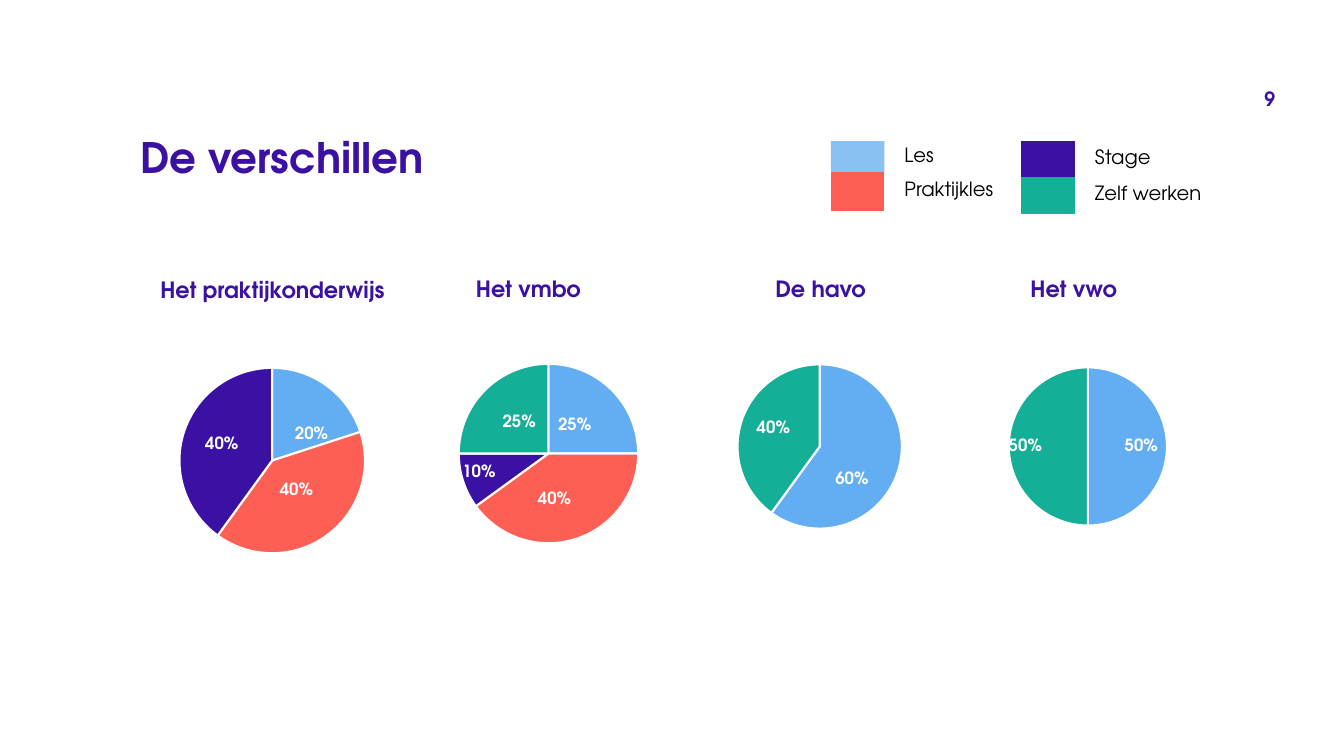
from math import cos, pi, sin

from pptx import Presentation
from pptx.chart.data import CategoryChartData
from pptx.dml.color import RGBColor
from pptx.enum.chart import XL_CHART_TYPE, XL_LABEL_POSITION
from pptx.enum.text import MSO_ANCHOR, MSO_AUTO_SIZE, PP_ALIGN
from pptx.oxml import parse_xml
from pptx.oxml.ns import nsdecls
from pptx.util import Inches, Pt

FONT = "TeX Gyre Adventor"
BLUE = RGBColor(0x63, 0xAD, 0xF2)
CORAL = RGBColor(0xFE, 0x5F, 0x55)
PURPLE = RGBColor(0x3B, 0x11, 0xA3)
GREEN = RGBColor(0x15, 0xAF, 0x97)
BLACK = RGBColor(0, 0, 0)
WHITE = RGBColor(255, 255, 255)
NO_GRID_STYLE = "{2D5ABB26-0587-4C30-8999-92F81FD0307C}"

SCHOOLS = [
    ("Het praktijkonderwijs", (1.59, 2.69, 2.43, 0.65),
     (1.27, 2.68, 2.64, 3.78), (2.7, 4.57), 1.84,
     [(20, BLUE, (0.39, -0.26)), (40, CORAL, (0.24, 0.3)),
      (40, PURPLE, (-0.5, -0.16)), (0, GREEN, None)]),
    ("Het vmbo", (4.72, 2.68, 1.3, 0.66),
     (4.04, 2.86, 2.64, 3.43), (5.44, 4.5), 1.78,
     [(25, BLUE, (0.26, -0.28)), (40, CORAL, (0.06, 0.46)),
      (10, PURPLE, (-0.69, 0.19)), (25, GREEN, (-0.29, -0.31))]),
    ("De havo", (7.69, 2.68, 1.3, 0.66),
     (6.81, 3.15, 2.64, 2.58), (8.13, 4.43), 1.63,
     [(60, BLUE, (0.32, 0.33)), (40, GREEN, (-0.46, -0.18))]),
    ("Het vwo", (10.22, 2.68, 1.34, 0.47),
     (9.47, 3.15, 2.64, 2.58), (10.79, 4.43), 1.57,
     [(50, BLUE, (0.53, 0)), (50, GREEN, (-0.62, 0))]),
]
LEGENDS = [
    ((8.24, 1.4, 2.06, 0.69), [("Les", BLUE, 0.31), ("Praktijkles", CORAL, 0.38)]),
    ((10.13, 1.4, 2.06, 0.72), [("Stage", PURPLE, 0.36), ("Zelf werken", GREEN, 0.36)]),
]


def inches(box):
    return [Inches(length) for length in box]


def style(font, size, color, bold=False):
    font.name, font.size, font.bold = FONT, Pt(size), bold
    font.color.rgb = color


def clear_margins(frame):
    frame.margin_left = frame.margin_right = 0
    frame.margin_top = frame.margin_bottom = 0


def add_title(slide, box):
    title = slide.shapes.title
    title.left, title.top, title.width, title.height = inches(box)
    frame = title.text_frame
    frame.text = "De verschillen"
    clear_margins(frame)
    frame.auto_size = MSO_AUTO_SIZE.NONE
    frame.vertical_anchor = MSO_ANCHOR.TOP
    paragraph = frame.paragraphs[0]
    paragraph.alignment = PP_ALIGN.LEFT
    paragraph.line_spacing = 0.9
    style(paragraph.font, 30, PURPLE, True)


def add_text(slide, box, text, size, spacing=None, anchor=MSO_ANCHOR.TOP):
    frame = slide.shapes.add_textbox(*inches(box)).text_frame
    frame.text = text
    frame.word_wrap = True
    frame.vertical_anchor = anchor
    clear_margins(frame)
    paragraph = frame.paragraphs[0]
    paragraph.line_spacing = spacing
    style(paragraph.font, size, PURPLE, True)


def manual_layout(x, y, size=""):
    return parse_xml(
        f'<c:layout {nsdecls("c")}><c:manualLayout>'
        + ('<c:layoutTarget val="inner"/><c:xMode val="edge"/><c:yMode val="edge"/>' if size else "")
        + f'<c:x val="{x:.4f}"/><c:y val="{y:.4f}"/>{size}</c:manualLayout></c:layout>')


def add_pie(slide, box, center, diameter, slices):
    left, top, width, height = box
    shares = [share for share, _, _ in slices]
    data = CategoryChartData()
    data.categories = [str(number) for number in range(1, len(slices) + 1)]
    data.add_series("Series 1", shares)
    chart = slide.shapes.add_chart(XL_CHART_TYPE.PIE, *inches(box), data).chart
    chart.has_title = chart.has_legend = False
    style(chart.font, 10, BLACK)
    plot = chart.plots[0]
    plot.vary_by_categories = True
    radius = diameter / 2
    plot_size = f'<c:w val="{diameter / width:.4f}"/><c:h val="{diameter / height:.4f}"/>'
    plot_area = chart.element.xpath(".//c:plotArea")[0]
    for layout in plot_area.xpath("./c:layout"):
        plot_area.remove(layout)
    plot_area.insert(0, manual_layout(
        (center[0] - radius - left) / width, (center[1] - radius - top) / height, plot_size))

    series = plot.series[0]
    labels = series.data_labels
    labels.show_percentage, labels.show_value = True, False
    labels.number_format, labels.number_format_is_linked = "0%", False
    style(labels.font, 12, WHITE, True)
    for index, (share, color, label_offset) in enumerate(slices):
        point = series.points[index]
        point.format.fill.solid()
        point.format.fill.fore_color.rgb = color
        point.format.line.color.rgb = WHITE
        point.format.line.width = Pt(1.5)
        style(point.data_label.font, 12, WHITE, True)
        point.data_label.position = XL_LABEL_POSITION.CENTER
        label = chart.element.xpath(f".//c:dLbl[c:idx/@val='{index}']")[0]
        label.xpath("./c:showVal")[0].set("val", "0")
        label.xpath("./c:showPercent")[0].set("val", "1" if label_offset else "0")
        if label_offset:
            angle = 2 * pi * (sum(shares[:index]) + share / 2) / sum(shares)
            label.insert(1, manual_layout(
                (label_offset[0] - radius / 2 * sin(angle)) / width,
                (label_offset[1] + radius / 2 * cos(angle)) / height))
    for leader_lines in chart.element.xpath(".//c:showLeaderLines"):
        leader_lines.set("val", "0")


def add_legend(slide, box, entries):
    frame = slide.shapes.add_table(len(entries), 2, *inches(box))
    frame.element.xpath(".//a:tableStyleId")[0].text = NO_GRID_STYLE
    table = frame.table
    table.first_row = table.horz_banding = False
    table.columns[0].width, table.columns[1].width = Inches(0.53), Inches(1.53)
    for row, (name, color, height) in enumerate(entries):
        table.rows[row].height = Inches(height)
        swatch, caption = table.cell(row, 0), table.cell(row, 1)
        clear_margins(swatch)
        swatch.fill.solid()
        swatch.fill.fore_color.rgb = color
        swatch.text_frame.paragraphs[0].font.size = Pt(14)
        if name == "Les":
            swatch_color = frame.element.xpath(".//a:tcPr/a:solidFill/a:srgbClr")[0]
            swatch_color.append(parse_xml(f'<a:alpha {nsdecls("a")} val="75000"/>'))
        caption.fill.background()
        caption.text = name
        caption.vertical_anchor = MSO_ANCHOR.MIDDLE
        caption.margin_left = Inches(0.2)
        caption.margin_top = caption.margin_bottom = Inches(0.03)
        style(caption.text_frame.paragraphs[0].font, 14, BLACK)


def main():
    presentation = Presentation()
    presentation.slide_width, presentation.slide_height = Inches(13.33), Inches(7.5)
    slide = presentation.slides.add_slide(presentation.slide_layouts[5])
    add_title(slide, (1.39, 1.36, 10.55, 0.76))
    for name, heading_box, pie_box, center, diameter, slices in SCHOOLS:
        add_pie(slide, pie_box, center, diameter, slices)
        add_text(slide, heading_box, name, 16, 1.2)
    for box, entries in LEGENDS:
        add_legend(slide, box, entries)
    add_text(slide, (12.54, 0.78, 0.7, 0.4), "9", 14, anchor=MSO_ANCHOR.MIDDLE)
    presentation.save("out.pptx")


if __name__ == "__main__":
    main()
